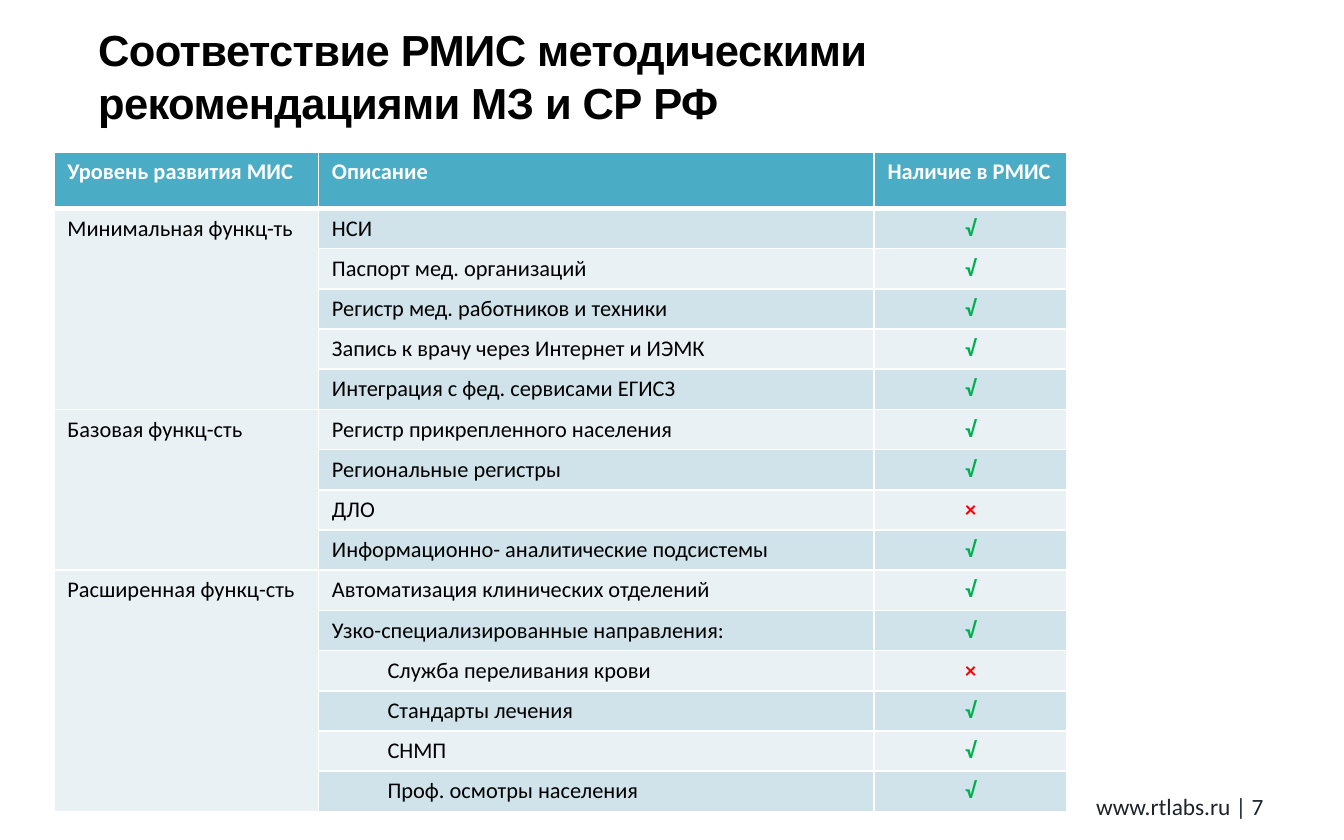
from dataclasses import dataclass

import pptx
import pptx.dml.color
import pptx.enum.text
import pptx.oxml
import pptx.oxml.ns
import pptx.util
from pptx.util import Cm


@dataclass(frozen=True)
class Theme:
    title_font: str = "Arial"
    body_font: str = "Calibri"
    title_size: float = 23.3
    table_size: float = 12
    footer_size: float = 12.5
    text: str = "000000"
    footer: str = "1C2329"
    white: str = "FFFFFF"
    header: str = "4BACC6"
    dark_band: str = "D0E3EA"
    light_band: str = "E9F1F5"
    present: str = "00B050"
    absent: str = "FF0000"


YES, NO = "√", "×"
HEADINGS = ["Уровень развития МИС", "Описание", "Наличие в РМИС"]
# Each level holds its features: description, mark, indent level.
LEVELS = {
    "Минимальная функц-ть": [
        ("НСИ", YES, 0),
        ("Паспорт мед. организаций", YES, 0),
        ("Регистр мед. работников и техники", YES, 0),
        ("Запись к врачу через Интернет и ИЭМК", YES, 0),
        ("Интеграция с фед. сервисами ЕГИСЗ", YES, 0),
    ],
    "Базовая функц-сть": [
        ("Регистр прикрепленного населения", YES, 0),
        ("Региональные регистры", YES, 0),
        ("ДЛО", NO, 0),
        ("Информационно- аналитические подсистемы", YES, 0),
    ],
    "Расширенная функц-сть": [
        ("Автоматизация клинических отделений", YES, 0),
        ("Узко-специализированные направления:", YES, 0),
        ("Служба переливания крови", NO, 1),
        ("Стандарты лечения", YES, 1),
        ("СНМП", YES, 1),
        ("Проф. осмотры населения", YES, 1),
    ],
}
COLUMN_WIDTHS = [Cm(5), Cm(10.5), Cm(3.65)]
HEADER_HEIGHT, ROW_HEIGHT = Cm(1.07), Cm(0.76)
INDENT = Cm(1.05)
ALIGN = pptx.enum.text.PP_ALIGN
ANCHOR = pptx.enum.text.MSO_ANCHOR


class SlideBuilder:
    def __init__(self, slide, theme):
        self.slide = slide
        self.theme = theme

    def format_runs(self, paragraph, font_name, size, color, bold=False):
        for run in paragraph.runs:
            run.font.name = font_name
            run.font.size = pptx.util.Pt(size)
            run.font.bold = bold
            run.font.color.rgb = pptx.dml.color.RGBColor.from_string(color)

    def title(self, text, left, top, width, height):
        shape = self.slide.shapes.title
        shape.left, shape.top, shape.width, shape.height = left, top, width, height
        frame = shape.text_frame
        frame.text = text
        frame.word_wrap = False
        frame.auto_size = pptx.enum.text.MSO_AUTO_SIZE.NONE
        frame.vertical_anchor = ANCHOR.MIDDLE
        for paragraph in frame.paragraphs:
            paragraph.alignment = ALIGN.LEFT
            self.format_runs(paragraph, self.theme.title_font,
                             self.theme.title_size, self.theme.text, bold=True)
            for run in paragraph.runs:
                run.font._element.set("spc", "-30")

    def footer(self, text, left, top, width, height):
        frame = self.slide.shapes.add_textbox(left, top, width, height).text_frame
        frame.text = text
        frame.word_wrap = True
        frame.vertical_anchor = ANCHOR.MIDDLE
        paragraph = frame.paragraphs[0]
        paragraph.alignment = ALIGN.RIGHT
        self.format_runs(paragraph, self.theme.body_font,
                         self.theme.footer_size, self.theme.footer)

    def borders(self, cell, bottom_width):
        properties = cell._tc.get_or_add_tcPr()
        namespace = pptx.oxml.ns.nsdecls("a")
        for side, width in (("L", 1), ("R", 1), ("T", 1), ("B", bottom_width)):
            properties.append(pptx.oxml.parse_xml(
                f'<a:ln{side} {namespace} w="{pptx.util.Pt(width)}"><a:solidFill>'
                f'<a:srgbClr val="{self.theme.white}"/></a:solidFill></a:ln{side}>'))

    def cell(self, cell, text, fill, color, bold=False, alignment=ALIGN.LEFT,
             level=0, bottom_width=1):
        self.borders(cell, bottom_width)
        cell.fill.solid()
        cell.fill.fore_color.rgb = pptx.dml.color.RGBColor.from_string(fill)
        cell.margin_top = cell.margin_bottom = Cm(0.12)
        cell.text_frame.text = text
        paragraph = cell.text_frame.paragraphs[0]
        paragraph.alignment = alignment
        if level:
            paragraph.level = level
            paragraph._p.get_or_add_pPr().set("marL", str(level * INDENT))
        paragraph.font.size = pptx.util.Pt(self.theme.table_size)
        self.format_runs(paragraph, self.theme.body_font,
                         self.theme.table_size, color, bold)

    def feature_table(self, left, top):
        theme = self.theme
        feature_count = sum(len(features) for features in LEVELS.values())
        table = self.slide.shapes.add_table(
            feature_count + 1, len(HEADINGS), left, top, sum(COLUMN_WIDTHS),
            HEADER_HEIGHT + feature_count * ROW_HEIGHT).table
        for column, width in zip(table.columns, COLUMN_WIDTHS):
            column.width = width
        for index, row in enumerate(table.rows):
            row.height = ROW_HEIGHT if index else HEADER_HEIGHT
        for column, heading in enumerate(HEADINGS):
            self.cell(table.cell(0, column), heading, theme.header, theme.white,
                      bold=True, bottom_width=3)

        row = 1
        for level_name, features in LEVELS.items():
            first_row = row
            for description, mark, level in features:
                band = theme.dark_band if row % 2 else theme.light_band
                self.cell(table.cell(row, 0), level_name if row == first_row else "",
                          theme.light_band, theme.text)
                self.cell(table.cell(row, 1), description, band, theme.text, level=level)
                self.cell(table.cell(row, 2), mark, band,
                          theme.present if mark == YES else theme.absent,
                          bold=True, alignment=ALIGN.CENTER)
                row += 1
            table.cell(first_row, 0).merge(table.cell(row - 1, 0))


def main():
    presentation = pptx.Presentation()
    presentation.slide_width, presentation.slide_height = Cm(25.4), Cm(15.88)
    title_only = presentation.slide_layouts[5]
    builder = SlideBuilder(presentation.slides.add_slide(title_only), Theme())
    builder.title("Соответствие РМИС методическими\nрекомендациями МЗ и СР РФ",
                  Cm(1.6), Cm(0.3), Cm(15.42), Cm(2.26))
    builder.feature_table(Cm(1.02), Cm(2.87))
    builder.footer("www.rtlabs.ru | 7", Cm(18.9), Cm(14.82), Cm(5.23), Cm(0.84))
    presentation.save("out.pptx")


if __name__ == "__main__":
    main()
